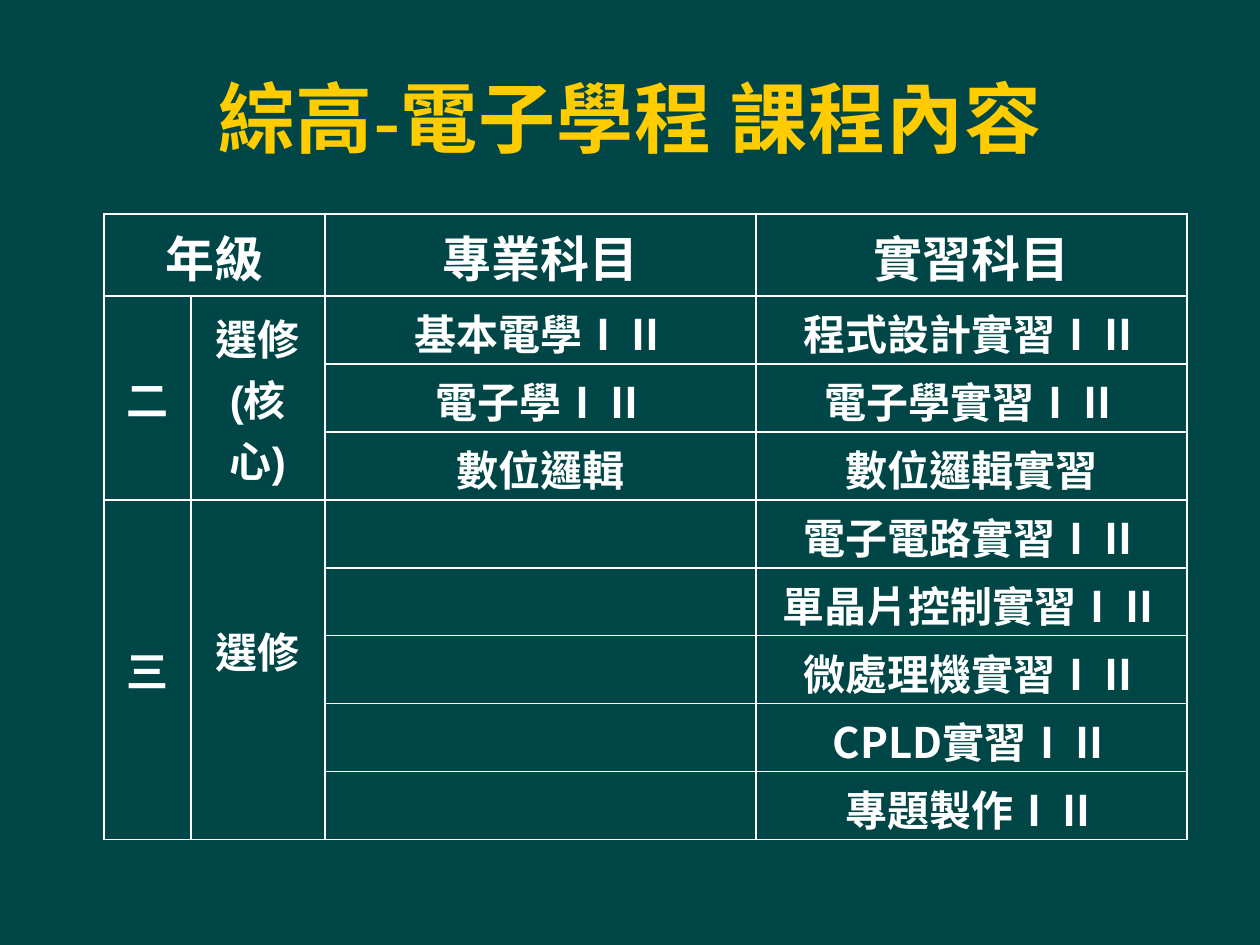
from lxml.etree import SubElement
from pptx import Presentation
from pptx.dml.color import RGBColor
from pptx.enum.text import MSO_ANCHOR as Anchor, PP_ALIGN as Align
from pptx.oxml.ns import qn
from pptx.util import Emu, Pt

PX = 914400 // 126
COLORS = {"bg": "004646", "title": "FFCC00", "text": "FFFFFF", "border": "FFFFFF"}
CJK = "Noto Sans CJK SC"
HEADER = {0: "年級", 2: "專業科目", 3: "實習科目"}
GRADES = [
    ("二", "選修\n(核心)", 0, [("基本電學ⅠⅡ", "程式設計實習ⅠⅡ"),
                            ("電子學ⅠⅡ", "電子學實習ⅠⅡ"),
                            ("數位邏輯", "數位邏輯實習")]),
    ("三", "選修", 46, [("", "電子電路實習ⅠⅡ"), ("", "單晶片控制實習ⅠⅡ"),
                      ("", "微處理機實習ⅠⅡ"), ("", "CPLD實習ⅠⅡ"), ("", "專題製作ⅠⅡ")]),
]


class Deck:
    """Holds the presentation, its style and the current slide."""

    def __init__(self, width, height):
        self.prs = Presentation()
        self.prs.slide_width, self.prs.slide_height = self.px(width), self.px(height)
        self.s = self.prs.slides.add_slide(self.prs.slide_layouts[6])
        self.s.background.fill.solid()
        self.s.background.fill.fore_color.rgb = self.color("bg")

    def px(self, n):
        return Emu(n * PX)

    def color(self, name):
        return RGBColor.from_string(COLORS[name])

    def run(self, p, text, size, color, font, spacing=0):
        for i, line in enumerate(text.split("\n")):
            if i:
                p.add_line_break()
            r = p.add_run()
            r.text = line
            r.font.size, r.font.bold, r.font.name = Pt(size), True, font
            r.font.color.rgb = self.color(color)
            rPr = r.font._element
            rPr.set("lang", "zh-TW")
            if spacing:
                rPr.set("spc", str(spacing))
            SubElement(rPr, qn("a:ea")).set("typeface", CJK)

    def title(self, x, y, w, h, runs):
        sp = self.s.shapes.add_textbox(*map(self.px, (x, y, w, h)))
        tf = sp.text_frame
        tf.word_wrap, tf.vertical_anchor = True, Anchor.MIDDLE
        p = tf.paragraphs[0]
        p.alignment = Align.CENTER
        for text, font in runs:
            self.run(p, text, 44, "title", font, 50)

    def table(self, x, y, widths, heights):
        sp = self.s.shapes.add_table(len(heights), len(widths), *map(
            self.px, (x, y, sum(widths), sum(heights))))
        tbl = sp.table
        tbl.first_row = tbl.horz_banding = False
        for col, w in zip(tbl.columns, widths):
            col.width = self.px(w)
        for row, h in zip(tbl.rows, heights):
            row.height = self.px(h)
        for cell in tbl.iter_cells():
            self.border(cell)
            cell.fill.background()
        return tbl

    def border(self, cell):
        tcPr = cell._tc.get_or_add_tcPr()
        for side in "LRTB":
            ln = SubElement(tcPr, qn("a:ln" + side), w=str(Pt(1)))
            fill = SubElement(ln, qn("a:solidFill"))
            SubElement(fill, qn("a:srgbClr"), val=COLORS["border"])

    def cell(self, cell, text, size=24, font=CJK, lift=0):
        cell.vertical_anchor = Anchor.MIDDLE
        if lift:
            cell.margin_bottom = self.px(lift)
        p = cell.text_frame.paragraphs[0]
        p.alignment = Align.CENTER
        if text:
            self.run(p, text, size, "text", font)


def main():
    deck = Deck(1260, 945)
    deck.title(63, 38, 1134, 157, [("綜高", "Arial"), ("-", "Times New Roman"),
                                   ("電子學程 課程內容", "Arial")])
    tbl = deck.table(104, 214, [87, 134, 431, 431], [82] + [68] * 8)
    tbl.cell(0, 0).merge(tbl.cell(0, 1))
    for col, text in HEADER.items():
        deck.cell(tbl.cell(0, col), text, 28)
    top = 1
    for grade, kind, lift, subjects in GRADES:
        for col in (0, 1):
            tbl.cell(top, col).merge(tbl.cell(top + len(subjects) - 1, col))
        deck.cell(tbl.cell(top, 0), grade)
        deck.cell(tbl.cell(top, 1), kind, font="Arial", lift=lift)
        for row, pair in enumerate(subjects, top):
            for col, text in enumerate(pair, 2):
                deck.cell(tbl.cell(row, col), text)
        top += len(subjects)
    deck.prs.save("out.pptx")


if __name__ == "__main__":
    main()
